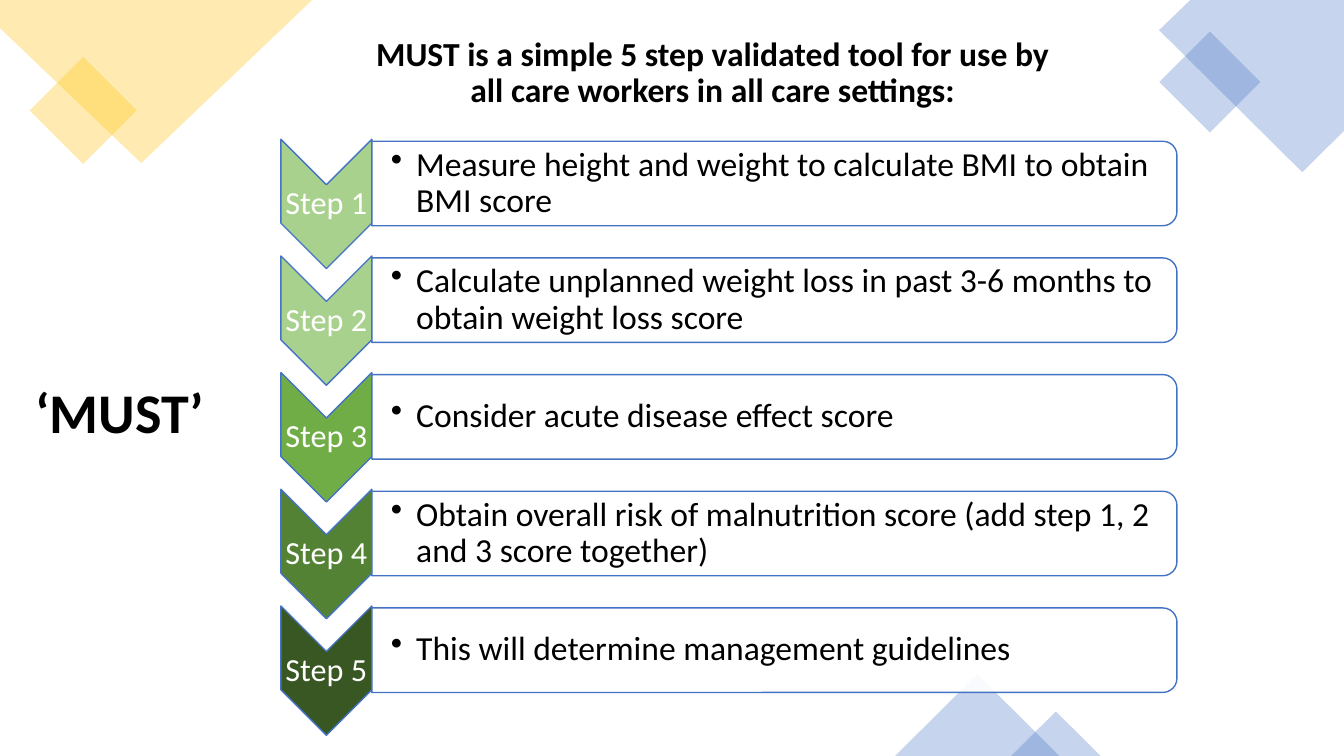
from collections import namedtuple
from dataclasses import dataclass

from lxml.etree import SubElement
from pptx import Presentation
from pptx.dml.color import RGBColor
from pptx.enum.shapes import MSO_SHAPE
from pptx.enum.text import MSO_ANCHOR, MSO_AUTO_SIZE, PP_ALIGN
from pptx.oxml.ns import qn
from pptx.util import Cm, Pt

Box = namedtuple("Box", "left top width height")


@dataclass(frozen=True)
class Theme:
    font: str = "Calibri"
    ink: str = "000000"
    paper: str = "FFFFFF"
    yellow: str = "FFC000"
    blue: str = "4472C4"
    title_size: int = 40
    body_size: int = 24
    step_size: int = 23
    tint: int = 30
    panel: int = 90


THEME = Theme()

STEPS = [
    ("A9D18E", "Measure height and weight to calculate BMI to obtain BMI score"),
    ("A9D18E", "Calculate unplanned weight loss in past 3-6 months to obtain weight loss score"),
    ("70AD47", "Consider acute disease effect score"),
    ("548235", "Obtain overall risk of malnutrition score (add step 1, 2 and 3 score together)"),
    ("385723", "This will determine management guidelines"),
]


def lengths(box):
    return [Cm(value) for value in box]


def paint(shape, color, opacity=100, outline=None):
    shape.shadow.inherit = False
    shape.fill.solid()
    shape.fill.fore_color.rgb = RGBColor.from_string(color)
    if opacity < 100:
        color_node = shape.fill._xPr.find(qn("a:solidFill"))[0]
        SubElement(color_node, qn("a:alpha"), val=str(opacity * 1000))
    if outline:
        shape.line.color.rgb = RGBColor.from_string(outline)
        shape.line.width = Pt(1)
    else:
        shape.line.fill.background()


def add_preset(page, preset, box, color, opacity=100, outline=None):
    shape = page.shapes.add_shape(preset, *lengths(box))
    paint(shape, color, opacity, outline)
    return shape


def add_turned(page, preset, box, color, opacity=100, outline=None):
    left = box.left + (box.width - box.height) / 2
    top = box.top + (box.height - box.width) / 2
    upright = Box(left, top, box.height, box.width)
    add_preset(page, preset, upright, color, opacity, outline).rotation = 90


def add_outline(page, box, points, color):
    corners = [(Cm(box.left + x), Cm(box.top + y)) for x, y in points]
    builder = page.shapes.build_freeform(*corners[0])
    builder.add_line_segments(corners[1:], close=True)
    paint(builder.convert_to_shape(), color, THEME.tint)


def add_diamond(page, box, color):
    add_preset(page, MSO_SHAPE.RECTANGLE, box, color, THEME.tint).rotation = 45


def write(shape, text, size, color, align, anchor, bold=False, inset=None, bullet=False):
    frame = shape.text_frame
    frame.word_wrap = True
    frame.auto_size = MSO_AUTO_SIZE.NONE
    frame.vertical_anchor = anchor
    if inset is not None:
        frame.margin_left = Cm(inset)
        frame.margin_right = frame.margin_top = frame.margin_bottom = Cm(0.05)
    para = frame.paragraphs[0]
    para.text = text
    para.alignment = align
    para.line_spacing = 0.9
    if bullet:
        properties = para._p.get_or_add_pPr()
        properties.set("marL", str(Cm(0.64)))
        properties.set("indent", str(Cm(-0.64)))
        SubElement(properties, qn("a:buChar"), char="•")
    font = para.font
    font.name = THEME.font
    font.size = Pt(size)
    font.bold = bold
    font.color.rgb = RGBColor.from_string(color)


def add_title(page, box):
    title = page.shapes.title
    title.left, title.top, title.width, title.height = lengths(box)
    write(title, "‘MUST’", THEME.title_size, THEME.ink, PP_ALIGN.LEFT, MSO_ANCHOR.TOP, bold=True)


def add_introduction(page, box):
    text = "MUST is a simple 5 step validated tool for use by all care workers in all care settings:"
    write(page.shapes.add_textbox(*lengths(box)), text, THEME.body_size, THEME.ink,
          PP_ALIGN.CENTER, MSO_ANCHOR.TOP, bold=True)


def add_left_corner(page, box):
    add_diamond(page, Box(box.left + 1.14, box.top + 1.83, 1.91, 1.91), THEME.yellow)
    points = [(0, 0), (box.width, 0), (3.56, box.height), (0, 0.71)]
    add_outline(page, box, points, THEME.yellow)


def add_right_corner(page, box):
    points = [(0.79, 0), (box.width, 0), (box.width, 3.3), (3.61, box.height), (0, 0.76)]
    add_outline(page, box, points, THEME.blue)
    add_diamond(page, Box(box.left + 0.38, box.top + 1.17, 1.8, 1.8), THEME.blue)


def add_bottom_peaks(page, box):
    small_width, small_height = 2.26, 1.12
    peaks = [
        Box(box.left, box.top, 4.14, box.height),
        Box(box.left + box.width - small_width, box.top + box.height - small_height,
            small_width, small_height),
    ]
    for peak in peaks:
        add_preset(page, MSO_SHAPE.ISOSCELES_TRIANGLE, peak, THEME.blue, THEME.tint)


def add_step(page, box, number, color, text):
    arrow_width = 2.29
    arrow = Box(box.left, box.top, arrow_width, box.height)
    add_turned(page, MSO_SHAPE.CHEVRON, arrow, color, outline=THEME.blue)
    label = Box(box.left, box.top + 1.14, arrow_width, 0.99)
    write(page.shapes.add_textbox(*lengths(label)), f"Step {number}", THEME.step_size,
          THEME.paper, PP_ALIGN.CENTER, MSO_ANCHOR.MIDDLE, inset=0.05)

    bar = Box(box.left + arrow_width, box.top + 0.05, box.width - arrow_width, 2.13)
    add_turned(page, MSO_SHAPE.ROUND_2_SAME_RECTANGLE, bar, THEME.paper, THEME.panel, THEME.blue)
    words = Box(bar.left, bar.top + 0.1, bar.width - 0.1, 1.92)
    write(page.shapes.add_textbox(*lengths(words)), text, THEME.body_size, THEME.ink,
          PP_ALIGN.LEFT, MSO_ANCHOR.MIDDLE, inset=0.48, bullet=True)


def add_steps(page, box):
    step_height = 3.26
    pitch = (box.height - step_height) / (len(STEPS) - 1)
    for index, (color, text) in enumerate(STEPS):
        row = Box(box.left, box.top + index * pitch, box.width, step_height)
        add_step(page, row, index + 1, color, text)


def main():
    deck = Presentation()
    deck.slide_width, deck.slide_height = Cm(33.87), Cm(19.05)
    page = deck.slides.add_slide(deck.slide_layouts[5])
    add_title(page, Box(0.64, 9.58, 11, 9.4))
    add_left_corner(page, Box(0, 0, 7.87, 4.11))
    add_right_corner(page, Box(29.21, 0, 4.66, 4.34))
    add_introduction(page, Box(8.97, 0.81, 17.98, 12.55))
    add_bottom_peaks(page, Box(22.56, 16.99, 5.18, 2.06))
    add_steps(page, Box(7.08, 3.51, 22.58, 15.02))
    deck.save("out.pptx")


if __name__ == "__main__":
    main()
